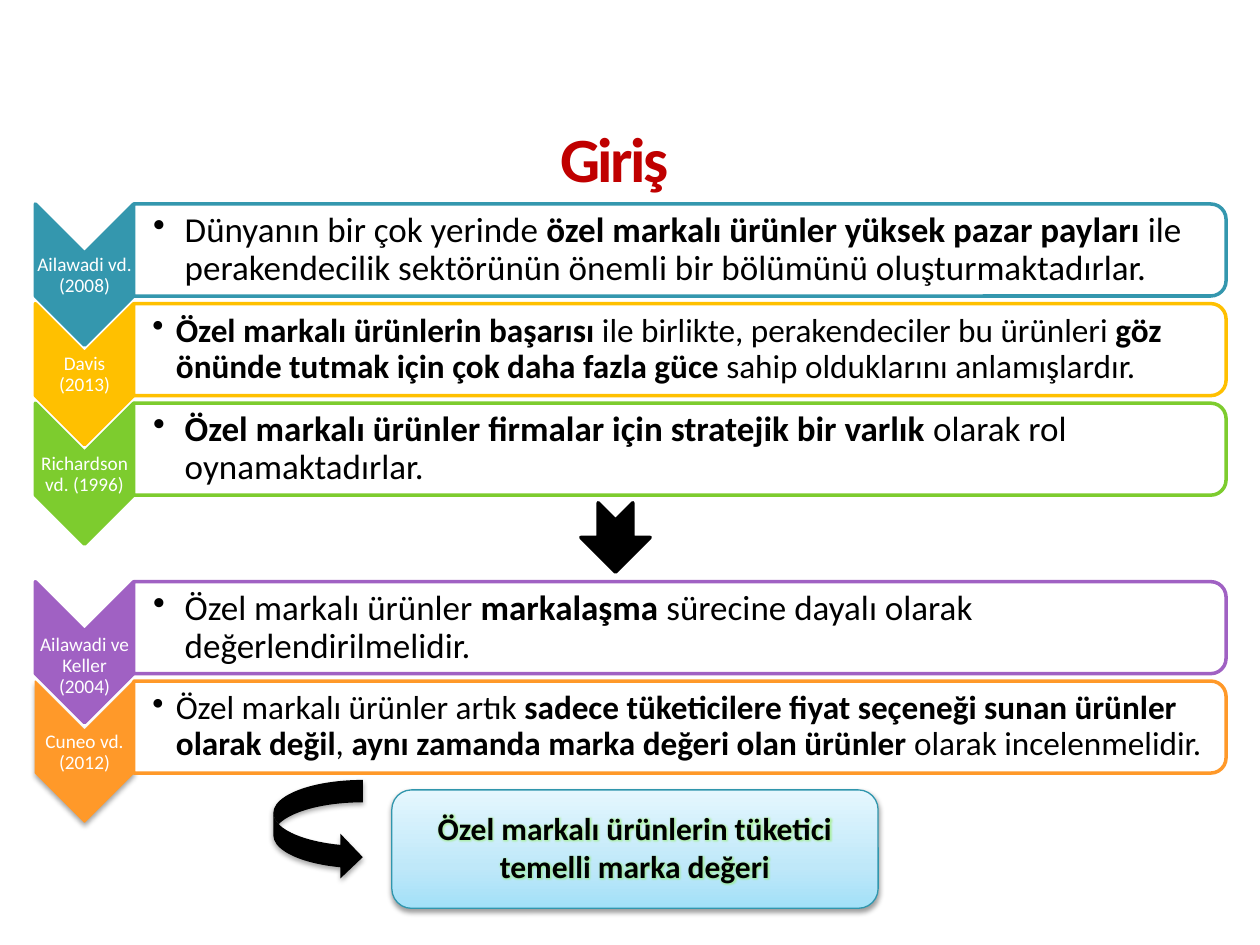
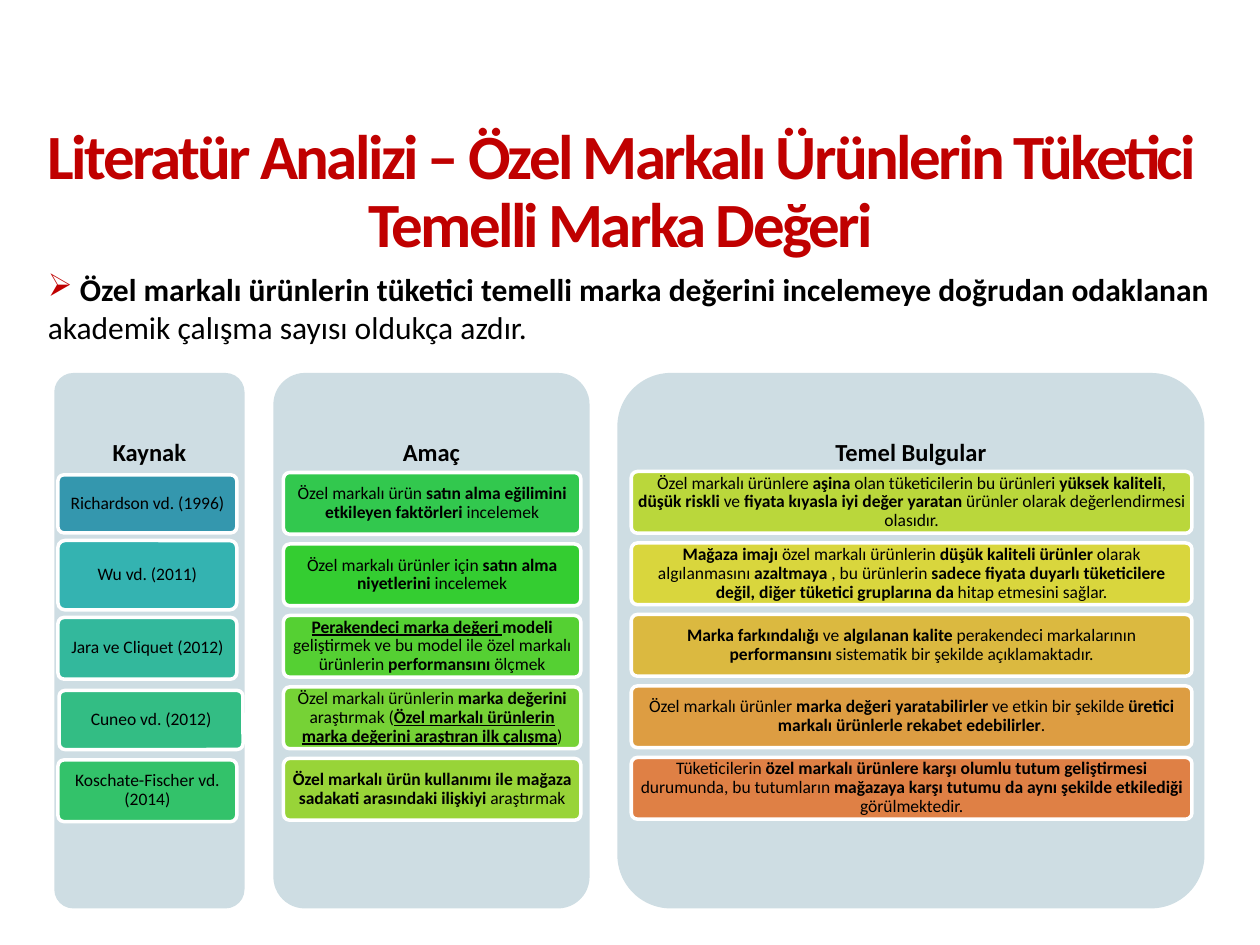
"""Build two slides on private-label brand equity: introduction and literature analysis."""
import copy
from dataclasses import dataclass
from typing import Optional

import pptx
import pptx.dml.color
import pptx.enum.shapes
import pptx.enum.text
import pptx.oxml
import pptx.oxml.ns
import pptx.util

Pt = pptx.util.Pt
RGB = pptx.dml.color.RGBColor.from_string
qn = pptx.oxml.ns.qn
SHAPE = pptx.enum.shapes.MSO_SHAPE
ALIGN = pptx.enum.text.PP_ALIGN
ANCHOR = pptx.enum.text.MSO_ANCHOR


@dataclass(frozen=True)
class Theme:
    font: str = "Calibri"
    title: str = "C00000"
    ink: str = "000000"
    paper: str = "FFFFFF"
    panel: str = "CEDDE3"
    teal: str = "3497AE"
    amber: str = "FFC000"
    green: str = "7DCC2E"
    purple: str = "A061C3"
    orange: str = "FF9929"
    outcome_stops: tuple = ((0, "A2E0F8"), (0.35, "BFE8F9"), (1, "E5F7FE"))
    outcome_line: str = "3096AD"
    glow: str = "7DF02E"
    sources: tuple = ("3497AE", "34B3B1", "33B89C", "33BD84", "33C26A")
    aims: tuple = ("32C84E", "34CD31", "55D033", "76D236", "98D438")
    findings: tuple = ("BAD73B", "D9D63D", "DBB940", "DD9D42", "DF8045")
    title_size: float = 36
    claim_size: float = 20
    tight_claim_size: float = 19
    body_size: float = 18
    heading_size: float = 14
    label_size: float = 11
    card_size: float = 10


THEME = Theme()


@dataclass(frozen=True)
class Claim:
    top: float
    source: str
    text: str
    color: str
    tight: bool = False
    label_drop: float = 0
    raised: bool = False


@dataclass(frozen=True)
class Card:
    text: str
    shift: float = 0
    grow: float = 0
    indent: float = 0
    widen: float = 0


@dataclass(frozen=True)
class Column:
    heading: str
    left: float
    width: float
    card_left: float
    card_top: float
    card_width: float
    fills: tuple
    cards: tuple


def xml(markup: str):
    """Parse a DrawingML fragment."""
    return pptx.oxml.parse_xml(markup.replace(
        ">", f" {pptx.oxml.ns.nsdecls('a')}>", 1) if "/>" not in markup.split(">")[0] + ">"
        else markup.replace("/>", f" {pptx.oxml.ns.nsdecls('a')}/>", 1))


def write(frame, text: str, *, size: float, color: str = THEME.ink, bold: bool = False,
          align=ALIGN.LEFT, anchor=ANCHOR.MIDDLE, insets=(0, 0, 0, 0),
          leading: Optional[float] = 0.9, bullet: str = "", bullet_color: str = "",
          hanging: float = 0, tracking: float = 0, glow: str = "") -> None:
    """Write one paragraph; * toggles bold and _ inside bold toggles underline."""
    frame.word_wrap = True
    frame.vertical_anchor = anchor
    frame.margin_left, frame.margin_top, frame.margin_right, frame.margin_bottom = map(Pt, insets)
    paragraph = frame.paragraphs[0]
    paragraph.alignment = align
    if leading:
        paragraph.line_spacing = leading
    if bullet:
        props = paragraph._p.get_or_add_pPr()
        props.set("marL", str(Pt(hanging)))
        props.set("indent", str(-Pt(hanging)))
        if bullet_color:
            props.append(xml(f'<a:buClr><a:srgbClr val="{bullet_color}"/></a:buClr>'))
        props.append(xml(f'<a:buChar char="{bullet}"/>'))
    for b, phrase in enumerate(text.split("*")):
        for u, words in enumerate(phrase.split("_")):
            if not words:
                continue
            run = paragraph.add_run()
            run.text = words
            run.font.name = THEME.font
            run.font.size = Pt(size)
            run.font.bold = bold or b % 2 == 1
            run.font.underline = u % 2 == 1
            run.font.color.rgb = RGB(color)
            props = run._r.get_or_add_rPr()
            if tracking:
                props.set("spc", str(int(tracking * 100)))
            if glow:
                props.find(qn("a:solidFill")).addnext(xml(
                    f'<a:effectLst><a:glow rad="{Pt(5)}"><a:srgbClr val="{glow}">'
                    '<a:alpha val="40000"/></a:srgbClr></a:glow></a:effectLst>'))


def text_box(slide, left: float, top: float, width: float, height: float, text: str, **style) -> None:
    """Place formatted text on a slide."""
    box = slide.shapes.add_textbox(Pt(left), Pt(top), Pt(width), Pt(height))
    write(box.text_frame, text, **style)


def draw(slide, kind, left: float, top: float, width: float, height: float, fill: str = "",
         line: str = "", weight: float = 2, adjust: Optional[float] = None,
         turned: bool = False, shadow: int = 0):
    """Draw a preset shape within its visible bounds, optionally turned by 90 degrees."""
    if turned:
        left, top = left + (width - height) / 2, top + (height - width) / 2
        width, height = height, width
    shape = slide.shapes.add_shape(kind, Pt(left), Pt(top), Pt(width), Pt(height))
    shape.rotation = 90 if turned else 0
    if adjust is not None:
        shape.adjustments[0] = adjust
    if fill:
        shape.fill.solid()
        shape.fill.fore_color.rgb = RGB(fill)
    if line:
        shape.line.color.rgb = RGB(line)
        shape.line.width = Pt(weight)
    else:
        shape.line.fill.background()
    shape.shadow.inherit = False
    if shadow:
        shape._element.spPr.find(qn("a:effectLst")).append(xml(
            f'<a:outerShdw blurRad="{Pt(3.1)}" dist="{Pt(1.8)}" dir="5400000" rotWithShape="0">'
            f'<a:srgbClr val="{THEME.ink}"><a:alpha val="{shadow * 1000}"/></a:srgbClr></a:outerShdw>'))
    return shape


def add_title(slide, left: float, top: float, text: str) -> None:
    """Add the shared red title."""
    text_box(slide, left, top, 669, 62.6, text, size=THEME.title_size, color=THEME.title, bold=True,
             align=ALIGN.CENTER, anchor=ANCHOR.TOP, tracking=-1.5)


def draw_claim(slide, claim: Claim) -> None:
    """Draw a source chevron with the claim beside it."""
    draw(slide, SHAPE.CHEVRON, 20.2, claim.top, 56.2, 80.6, claim.color, claim.color,
         weight=0.75 if claim.raised else 2, turned=True, shadow=35 if claim.raised else 0)
    text_box(slide, 20.2, claim.top + 28.6 + claim.label_drop, 56.2, 24.5, claim.source,
             size=THEME.label_size, color=THEME.paper, align=ALIGN.CENTER, insets=(0.7,) * 4)
    draw(slide, SHAPE.ROUND_2_SAME_RECTANGLE, 76.4, claim.top, 624.2, 52.6, THEME.paper, claim.color,
         turned=True)
    text_box(slide, 76.4, claim.top + 2.6, 621.4, 47.5, claim.text,
             size=THEME.tight_claim_size if claim.tight else THEME.claim_size, bullet="•",
             hanging=13.5 if claim.tight else 18,
             insets=(10.7 if claim.tight else 11.2, 0.7, 0.7, 0.7))


def draw_column(slide, column: Column) -> None:
    """Draw a panel with its heading and evenly stacked cards."""
    top, pitch, card_height = 213.1, 40.85, 35.3
    draw(slide, SHAPE.ROUNDED_RECTANGLE, column.left, top, column.width, 306, THEME.panel, adjust=0.1)
    text_box(slide, column.left, top, column.width, 91.8, column.heading, size=THEME.heading_size,
             bold=True, align=ALIGN.CENTER, insets=(4.2,) * 4)
    for row, (card, fill) in enumerate(zip(column.cards, column.fills)):
        tile = draw(slide, SHAPE.ROUNDED_RECTANGLE, column.card_left + card.indent,
                    column.card_top + pitch * row + card.shift, column.card_width + card.widen,
                    card_height + card.grow, fill, THEME.paper, adjust=0.1)
        write(tile.text_frame, card.text, size=THEME.card_size, align=ALIGN.CENTER,
              insets=(2, 1.3, 2, 1.3))


CLAIMS = (
    Claim(116.6, "Ailawadi vd. (2008)", "Dünyanın bir çok yerinde *özel markalı ürünler yüksek pazar payları "
          "*ile perakendecilik sektörünün önemli bir bölümünü oluşturmaktadırlar.", THEME.teal),
    Claim(173.5, "Davis (2013)", "*Özel markalı ürünlerin başarısı *ile birlikte, perakendeciler bu ürünleri "
          "*göz önünde tutmak için çok daha fazla güce *sahip olduklarını anlamışlardır.",
          THEME.amber, tight=True),
    Claim(230.4, "Richardson vd. (1996)", "*Özel markalı ürünler firmalar için stratejik bir varlık "
          "*olarak rol oynamaktadırlar.", THEME.green),
    Claim(332.4, "Ailawadi ve Keller (2004)", "Özel markalı ürünler *markalaşma *sürecine dayalı olarak "
          "değerlendirilmelidir.", THEME.purple, label_drop=7.5),
    Claim(389.2, "Cuneo vd. (2012)", "Özel markalı ürünler artık *sadece tüketicilere fiyat seçeneği sunan "
          "ürünler olarak değil*, *aynı zamanda marka değeri olan ürünler *olarak incelenmelidir.",
          THEME.orange, tight=True, raised=True),
)

COLUMNS = (
    Column("Kaynak", 31, 108.7, 33.1, 270, 102.2, THEME.sources, (
        Card("Richardson vd. (1996)", shift=1.4, grow=-2.2),
        Card("Wu vd. (2011)", shift=-2, grow=4.3),
        Card("Jara ve Cliquet (2012)", shift=1.1),
        Card("Cuneo vd. (2012)", shift=2, grow=-1.5, indent=0.7, widen=2.9),
        Card("Koschate-Fischer vd. (2014)", shift=0.8),
    )),
    Column("Amaç", 156.2, 180.7, 162, 270, 169.9, THEME.aims, (
        Card("Özel markalı ürün *satın alma eğilimini etkileyen faktörleri *incelemek"),
        Card("Özel markalı ürünler için *satın alma niyetlerini* incelemek"),
        Card("*_Perakendeci marka değeri _modeli *geliştirmek ve bu model ile özel markalı ürünlerin "
             "*performansını* ölçmek"),
        Card("Özel markalı ürünlerin *marka değerini *araştırmak (*_Özel markalı ürünlerin marka değerini "
             "araştıran ilk çalışma_*)"),
        Card("*Özel markalı ürün kullanımı ile mağaza sadakati arasındaki ilişkiyi *araştırmak"),
    )),
    Column("Temel Bulgular", 352.8, 335.5, 360.7, 269.4, 320.4, THEME.findings, (
        Card("Özel markalı ürünlere *aşina* olan tüketicilerin bu ürünleri *yüksek kaliteli*, *düşük riskli "
             "*ve *fiyata kıyasla iyi değer yaratan *ürünler olarak değerlendirmesi olasıdır."),
        Card("*Mağaza imajı *özel markalı ürünlerin *düşük kaliteli ürünler *olarak algılanmasını *azaltmaya* "
             ", bu ürünlerin *sadece fiyata duyarlı tüketicilere değil, diğer tüketici gruplarına da "
             "*hitap etmesini sağlar."),
        Card("*Marka farkındalığı *ve *algılanan kalite *perakendeci markalarının *performansını* sistematik "
             "bir şekilde açıklamaktadır."),
        Card("Özel markalı ürünler *marka değeri yaratabilirler *ve etkin bir şekilde *üretici markalı "
             "ürünlerle rekabet edebilirler*."),
        Card("Tüketicilerin *özel markalı ürünlere karşı olumlu tutum geliştirmesi *durumunda, bu tutumların "
             "*mağazaya karşı tutumu da aynı şekilde etkilediği *görülmektedir."),
    )),
)


def build_introduction(slide) -> None:
    """Draw the claims and the outcome they lead to."""
    add_title(slide, 16.6, 73.4, "Giriş")
    for claim in CLAIMS:
        draw_claim(slide, claim)
    draw(slide, SHAPE.NOTCHED_RIGHT_ARROW, 331.9, 287.3, 39.6, 39.6, THEME.ink, THEME.ink, turned=True)
    outcome = draw(slide, SHAPE.ROUNDED_RECTANGLE, 223.9, 451.4, 277.9, 67.7, line=THEME.outcome_line,
                   weight=0.75, shadow=38)
    outcome.fill.gradient()
    outcome.fill.gradient_angle = 90
    stops = outcome._element.spPr.find(".//" + qn("a:gsLst"))
    stops.insert(1, copy.deepcopy(stops[0]))
    for stop, (position, color) in zip(outcome.fill.gradient_stops, THEME.outcome_stops):
        stop.position = position
        stop.color.rgb = RGB(color)
    write(outcome.text_frame, "Özel markalı ürünlerin tüketici temelli marka değeri", size=THEME.body_size,
          bold=True, align=ALIGN.CENTER, leading=None, insets=(7.2, 2.2, 7.2, 5), glow=THEME.glow)
    draw(slide, SHAPE.CURVED_RIGHT_ARROW, 156.2, 445.7, 51.1, 56.9, THEME.ink, shadow=35)


def build_literature(slide) -> None:
    """Draw the literature summary and its three columns."""
    add_title(slide, 20.2, 71.3, "Literatür Analizi – Özel Markalı Ürünlerin Tüketici Temelli Marka Değeri")
    text_box(slide, 20.2, 151, 691.9, 52, " *Özel markalı ürünlerin tüketici temelli marka değerini incelemeye "
             "doğrudan odaklanan *akademik çalışma sayısı oldukça azdır.", size=THEME.body_size,
             anchor=ANCHOR.TOP, leading=None, bullet="➢", bullet_color=THEME.title,
             insets=(7.2, 3.6, 7.2, 3.6))
    for column in COLUMNS:
        draw_column(slide, column)


def main() -> None:
    """Build and save the presentation."""
    deck = pptx.Presentation()
    deck.slide_width, deck.slide_height = Pt(720), Pt(540)
    for build in (build_introduction, build_literature):
        build(deck.slides.add_slide(deck.slide_layouts[6]))
    deck.save("out.pptx")


if __name__ == "__main__":
    main()
